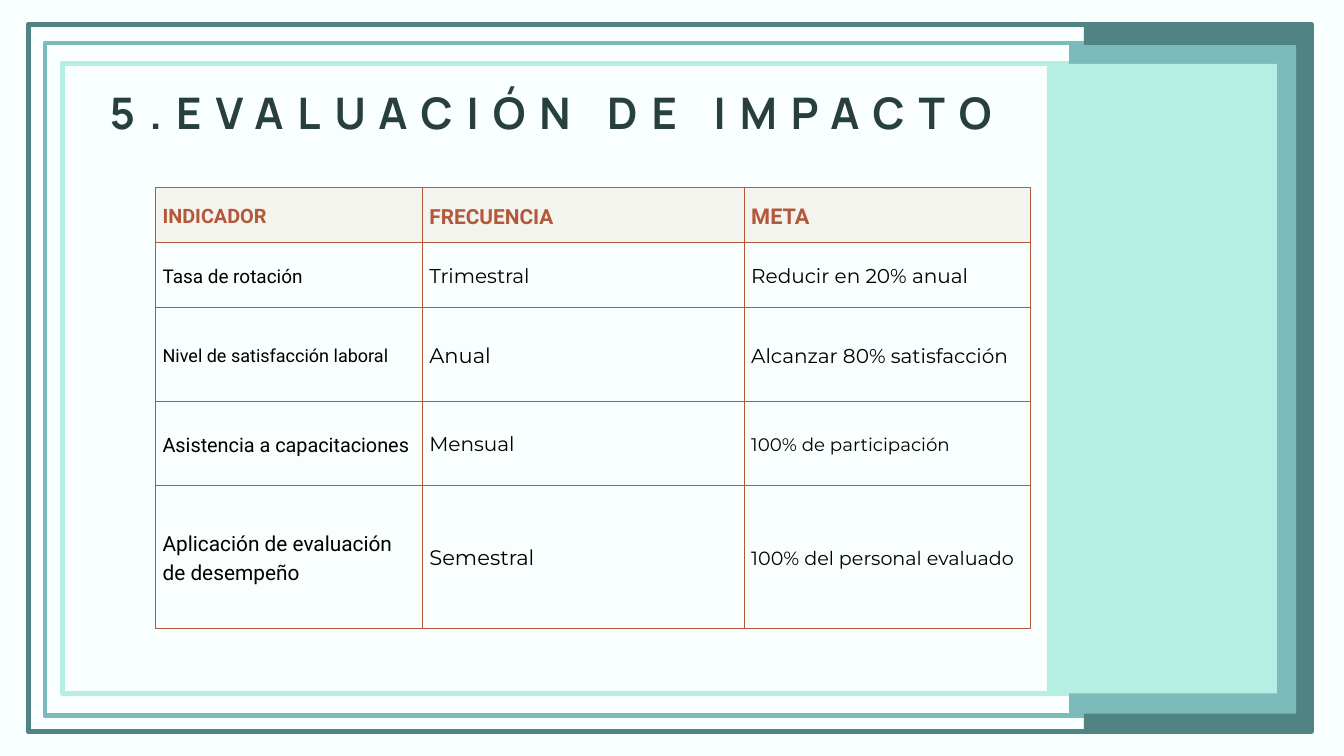
import pptx
import pptx.dml.color
import pptx.enum.shapes
import pptx.enum.text
import pptx.oxml
import pptx.oxml.ns
import pptx.util

EMU_PER_PX = 9144
COLOURS = {
    "paper": "F9FFFE",
    "deep": "508484",
    "mid": "7CBBBB",
    "mint": "B5EFE3",
    "title": "27403B",
    "rust": "B4583C",
    "header": "F4F4EE",
    "ink": "000000",
}
FRAMES = [
    ("deep", 42, 36, 1909, 1053),
    ("mid", 67, 64, 1859, 1001),
    ("mint", 93, 94, 1802, 938),
]
PANELS = [
    ("deep", 1613, 36, 338, 1053),
    ("mid", 1591, 67, 338, 995),
    ("mint", 1558, 95, 342, 937),
]
COLUMN_WIDTHS = [397, 479, 427]
ROW_HEIGHTS = [82, 97, 139, 125, 213]
HEADER = [("INDICADOR", 21.3), ("FRECUENCIA", 22.3), ("META", 23.3)]
INDICATORS = [
    [("Tasa de rotación", 20.3), ("Trimestral", 21.5), ("Reducir en 20% anual", 21.5)],
    [("Nivel de satisfacción laboral", 19.3), ("Anual", 22.5), ("Alcanzar 80% satisfacción", 21.5)],
    [("Asistencia a capacitaciones", 21.3), ("Mensual", 21.5), ("100% de participación", 19.5)],
    [("Aplicación de evaluación de desempeño", 22.3), ("Semestral", 22.5), ("100% del personal evaluado", 20.5)],
]


def px(length):
    return pptx.util.Emu(length * EMU_PER_PX)


def colour(name):
    return pptx.dml.color.RGBColor.from_string(COLOURS[name])


def write_text(frame, text, *, size, font, ink, leading, bold=False, tracking=0, align="LEFT"):
    para = frame.paragraphs[0]
    para.alignment = getattr(pptx.enum.text.PP_ALIGN, align)
    para.line_spacing = pptx.util.Pt(leading)
    para.space_before = pptx.util.Pt(0)
    span = para.add_run()
    span.text = text
    span.font.size = pptx.util.Pt(size)
    span.font.name = font
    span.font.bold = bold
    span.font.color.rgb = colour(ink)
    if tracking:
        span.font._element.set("spc", str(tracking * 100))


def add_box(group, left, top, width, height):
    box = group.shapes.add_shape(
        pptx.enum.shapes.MSO_SHAPE.RECTANGLE, px(left), px(top), px(width), px(height)
    )
    box.shadow.inherit = False
    return box


def add_frame(group, name, *bounds):
    box = add_box(group, *bounds)
    box.fill.background()
    box.line.color.rgb = colour(name)
    box.line.width = pptx.util.Pt(5.25)


def add_panel(group, name, *bounds):
    box = add_box(group, *bounds)
    box.fill.solid()
    box.fill.fore_color.rgb = colour(name)
    box.line.fill.background()


def set_title(page, text):
    title = page.shapes.title
    title.left, title.top, title.width, title.height = map(px, (130, 132, 1380, 76))
    frame = title.text_frame
    frame.margin_left = frame.margin_top = frame.margin_right = frame.margin_bottom = 0
    frame.vertical_anchor = pptx.enum.text.MSO_ANCHOR.TOP
    frame.word_wrap = True
    frame.auto_size = pptx.enum.text.MSO_AUTO_SIZE.SHAPE_TO_FIT_TEXT
    write_text(frame, text, size=46.6, font="Manrope", ink="title",
               leading=53.2, bold=True, tracking=15, align="CENTER")


def set_borders(cell):
    properties = cell._tc.get_or_add_tcPr()
    for position, side in enumerate(("lnL", "lnR", "lnT", "lnB")):
        border = pptx.oxml.parse_xml(
            f'<a:{side} {pptx.oxml.ns.nsdecls("a")} w="{pptx.util.Pt(0.75)}">'
            f'<a:solidFill><a:srgbClr val="{COLOURS["rust"]}"/></a:solidFill></a:{side}>'
        )
        properties.insert(position, border)


def fill_cell(cell, text, size, font, is_header):
    cell.margin_left = cell.margin_top = cell.margin_right = cell.margin_bottom = px(11)
    cell.vertical_anchor = pptx.enum.text.MSO_ANCHOR.MIDDLE
    if is_header:
        cell.fill.solid()
        cell.fill.fore_color.rgb = colour("header")
    else:
        cell.fill.background()
    set_borders(cell)
    write_text(cell.text_frame, text, size=size, font=font, bold=is_header,
               ink="rust" if is_header else "ink", leading=round(size * 1.38, 1))


def add_indicator_table(page):
    rows = [HEADER] + INDICATORS
    table = page.shapes.add_table(
        len(rows), len(COLUMN_WIDTHS), px(231), px(279),
        px(sum(COLUMN_WIDTHS)), px(sum(ROW_HEIGHTS)),
    ).table
    table.horz_banding = False
    for column, width in zip(table.columns, COLUMN_WIDTHS):
        column.width = px(width)
    for row, height in zip(table.rows, ROW_HEIGHTS):
        row.height = px(height)
    for row_index, row in enumerate(rows):
        for column_index, (text, size) in enumerate(row):
            is_header = row_index == 0
            font = "Roboto" if is_header or column_index == 0 else "Montserrat"
            fill_cell(table.cell(row_index, column_index), text, size, font, is_header)


def main():
    deck = pptx.Presentation()
    deck.slide_width, deck.slide_height = px(2000), px(1125)
    page = deck.slides.add_slide(deck.slide_layouts.get_by_name("Title Only"))
    page.background.fill.solid()
    page.background.fill.fore_color.rgb = colour("paper")
    border = page.shapes.add_group_shape()
    for frame in FRAMES:
        add_frame(border, *frame)
    for panel in PANELS:
        add_panel(border, *panel)
    set_title(page, "5.EVALUACIÓN DE IMPACTO")
    add_indicator_table(page)
    deck.save("out.pptx")


if __name__ == "__main__":
    main()
